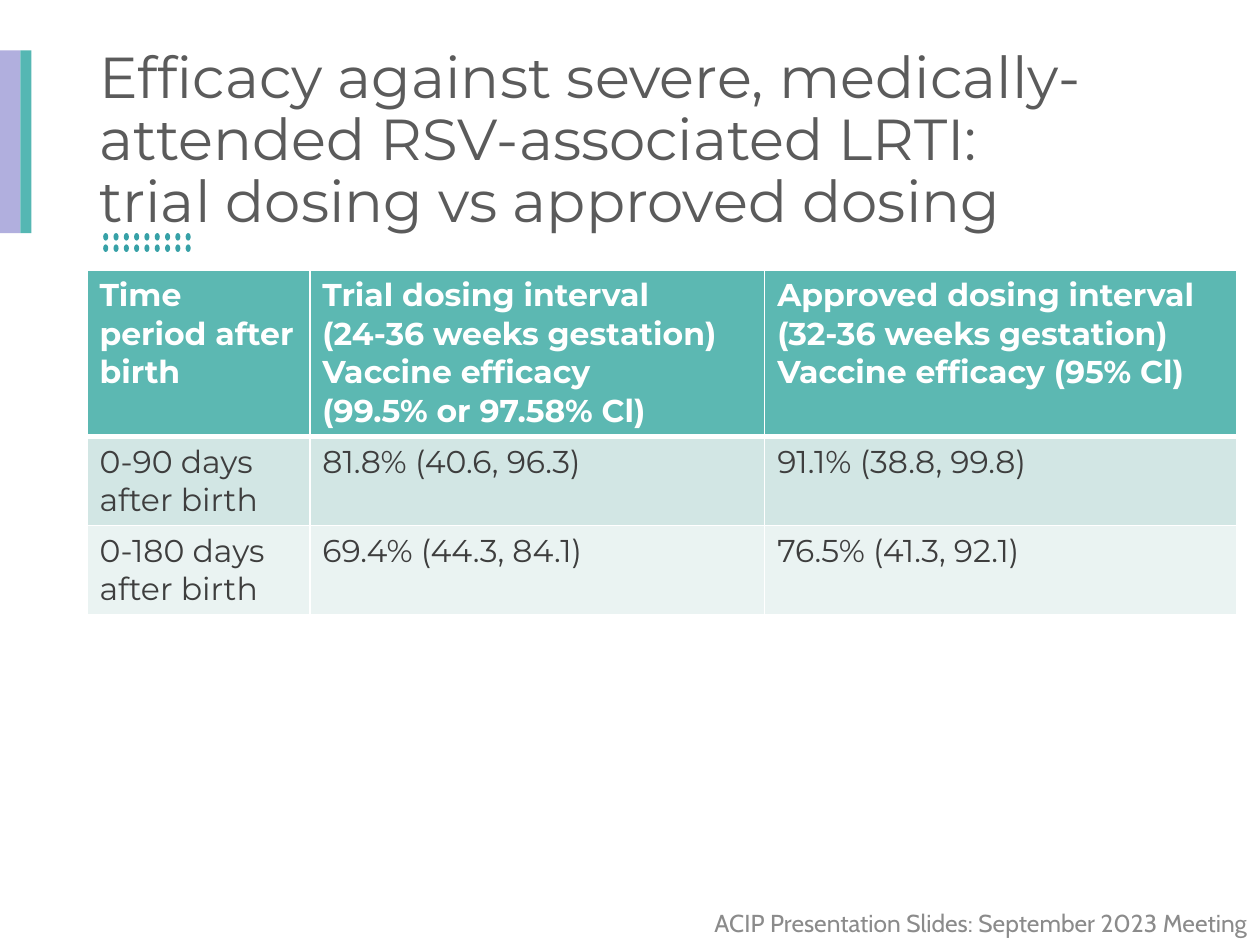
from lxml import etree
from pptx import Presentation
from pptx.dml.color import RGBColor
from pptx.enum import shapes, text
from pptx.oxml import ns
from pptx.util import Pt

COLORS = {
    "lilac": "B1AFDE", "teal": "55B7B3", "dot": "37A1A7",
    "title": "5B5B5B", "body": "3E3E3E", "footer": "8B8B8B",
    "header": "5CB8B2", "row_dark": "D2E6E4", "row_light": "EAF3F2",
    "white": "FFFFFF",
}
HEADINGS = [
    ["Time period after birth"],
    ["Trial dosing interval", "(24-36 weeks gestation)",
     "Vaccine efficacy \n(99.5% or 97.58% Cl)"],
    ["Approved dosing interval \n(32-36 weeks gestation) Vaccine efficacy (95% Cl)"],
]
RESULTS = [
    [["0-90 days after birth"], ["81.8% (40.6, 96.3)"], ["91.1% (38.8, 99.8)"]],
    [["0-180 days after birth"], ["69.4% (44.3, 84.1)"], ["76.5% (41.3, 92.1)"]],
]


def rgb(name):
    return RGBColor.from_string(COLORS[name])


def write(frame, paragraphs, size, color, font="Montserrat", bold=False,
          align=text.PP_ALIGN.LEFT, spacing=None):
    """Fill a text frame; a newline inside a paragraph is a line break."""
    frame.word_wrap = True
    for index, words in enumerate(paragraphs):
        paragraph = frame.paragraphs[0] if index == 0 else frame.add_paragraph()
        paragraph.text = words
        paragraph.alignment = align
        if spacing:
            paragraph.line_spacing = spacing
        for run in paragraph.runs:
            run.font.name = font
            run.font.size = Pt(size)
            run.font.bold = bold
            run.font.color.rgb = rgb(color)


def add_solid(parent, kind, left, top, width, height, color):
    solid = parent.add_shape(kind, Pt(left), Pt(top), Pt(width), Pt(height))
    solid.shadow.inherit = False
    solid.fill.solid()
    solid.fill.fore_color.rgb = rgb(color)
    solid.line.fill.background()


def add_side_bars(slide, left, top, width, height):
    lilac_width = width * 0.65
    bar = shapes.MSO_SHAPE.RECTANGLE
    add_solid(slide.shapes, bar, left, top, lilac_width, height, "lilac")
    add_solid(slide.shapes, bar, left + lilac_width, top,
              width - lilac_width, height, "teal")


def add_dots(slide, left, top, width, height, columns=9, rows=2):
    dot_width, dot_height = 2.9, 4.3
    step_x = (width - dot_width) / (columns - 1)
    step_y = (height - dot_height) / (rows - 1)
    dots = slide.shapes.add_group_shape()
    for column in range(columns):
        for row in range(rows):
            add_solid(dots.shapes, shapes.MSO_SHAPE.OVAL, left + column * step_x,
                      top + row * step_y, dot_width, dot_height, "dot")


def add_title(slide, left, top, width, height):
    title = slide.shapes.add_textbox(Pt(left), Pt(top), Pt(width), Pt(height))
    title.text_frame.vertical_anchor = text.MSO_ANCHOR.MIDDLE
    write(title.text_frame,
          ["Efficacy against severe, medically-attended RSV-associated LRTI: \n"
           "trial dosing vs approved dosing"],
          33, "title", spacing=0.9)


def set_borders(cell, **widths):
    """Draw white borders; the keys are the sides L, R, T and B."""
    properties = cell._tc.get_or_add_tcPr()
    for side, width in widths.items():
        line = etree.SubElement(properties, ns.qn(f"a:ln{side}"), w=str(Pt(width)))
        fill = etree.SubElement(line, ns.qn("a:solidFill"))
        etree.SubElement(fill, ns.qn("a:srgbClr"), val=COLORS["white"])


def add_efficacy_table(slide, left, top, width, height):
    column_widths = [127.4, 259.9, width - 127.4 - 259.9]
    row_heights = [height - 2 * 51, 51, 51]
    table = slide.shapes.add_table(3, 3, Pt(left), Pt(top), Pt(width), Pt(height)).table
    for column, column_width in zip(table.columns, column_widths):
        column.width = Pt(column_width)
    for row, row_height in zip(table.rows, row_heights):
        row.height = Pt(row_height)

    fills = ["header", "row_dark", "row_light"]
    for r, (contents, fill) in enumerate(zip([HEADINGS] + RESULTS, fills)):
        is_header = r == 0
        for c, paragraphs in enumerate(contents):
            cell = table.cell(r, c)
            # The rule under the header is thicker than the others
            set_borders(cell, L=1, R=1, T=3 if r == 1 else 1, B=3 if is_header else 1)
            cell.fill.solid()
            cell.fill.fore_color.rgb = rgb(fill)
            write(cell.text_frame, paragraphs, 18,
                  "white" if is_header else "body", bold=is_header)


def add_footer(slide, left, top, width, height):
    footer = slide.shapes.add_textbox(Pt(left), Pt(top), Pt(width), Pt(height))
    write(footer.text_frame, ["ACIP Presentation Slides: September 2023 Meeting"],
          14, "footer", font="Cabin", align=text.PP_ALIGN.RIGHT)


def main():
    deck = Presentation()
    deck.slide_width, deck.slide_height = Pt(720), Pt(540)
    slide = deck.slides.add_slide(deck.slide_layouts[6])

    # Decoration
    add_side_bars(slide, 0, 28.8, 18, 104.4)
    add_dots(slide, 59, 133.2, 50, 10.8)
    # Content
    add_title(slide, 49.7, 28.8, 620.6, 104.4)
    add_efficacy_table(slide, 49.7, 154.4, 657.3, 197)
    add_footer(slide, 360, 515.5, 360, 24.5)

    deck.save("out.pptx")


if __name__ == "__main__":
    main()
